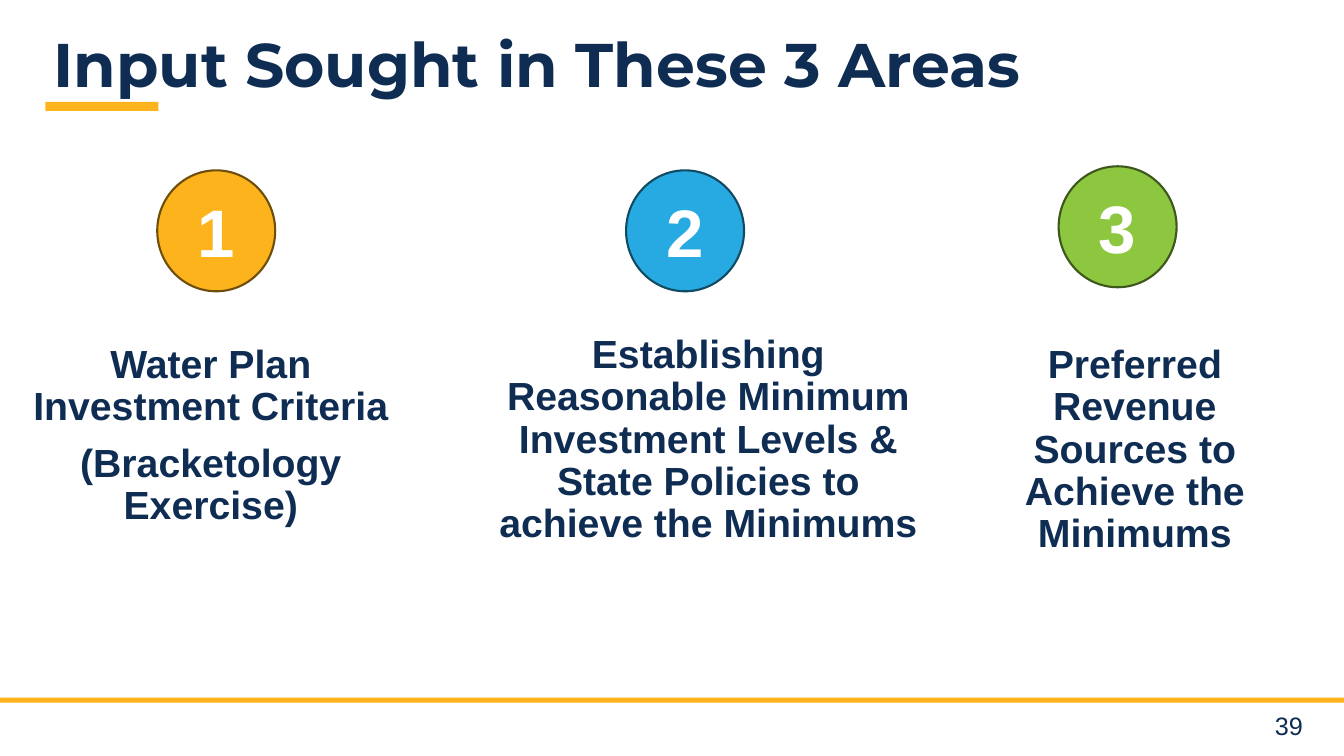
"""Build the slide that names the three areas where input is sought."""
from pptx import Presentation
from pptx.dml.color import RGBColor
from pptx.enum.shapes import MSO_SHAPE as Shape
from pptx.enum.text import MSO_ANCHOR as Anchor, MSO_AUTO_SIZE as AutoSize, PP_ALIGN as Align
from pptx.util import Inches, Pt

COLORS = {
    "navy": "0F2D52", "white": "FFFFFF",
    "gold": "FCB31C", "gold_edge": "6E4E0C",
    "blue": "27AAE1", "blue_edge": "114B63",
    "green": "8DC63F", "green_edge": "3E571C",
}
TITLE = "Input Sought in These 3 Areas"
PAGE_NUMBER = "39"
AREAS = [
    {"color": "gold", "circle": (1.56, 1.69), "label": (0.22, 3.37, 3.74),
     "lines": ["Water Plan Investment Criteria", "(Bracketology Exercise)"]},
    {"color": "blue", "circle": (6.21, 1.69), "label": (4.69, 3.27, 4.67),
     "lines": ["Establishing Reasonable Minimum Investment Levels & "
               "State Policies to achieve the Minimums"]},
    {"color": "green", "circle": (10.5, 1.65), "label": (9.88, 3.37, 2.75),
     "lines": ["Preferred Revenue Sources to Achieve the Minimums"]},
]
GOLD_BARS = [(0, 6.92, 13.33, 0.05), (0.45, 1.01, 1.12, 0.09)]
CIRCLE_SIZE = (1.17, 1.2)
LABEL_HEIGHT = 3.4
FORMATS = {
    "title": {"name": "Montserrat", "size": Pt(44), "bold": True},
    "number": {"name": "Arial", "size": Pt(48), "bold": True},
    "label": {"name": "Arial", "size": Pt(28), "bold": True},
    "page": {"name": "Arial", "size": Pt(18), "bold": False},
}


def rgb(color):
    return RGBColor.from_string(COLORS[color])


def write(frame, lines, style, color="navy", align=Align.CENTER, anchor=Anchor.TOP,
          line_spacing=None, gap=0):
    frame.word_wrap = True
    frame.auto_size = AutoSize.NONE
    frame.vertical_anchor = anchor
    for index, line in enumerate(lines):
        paragraph = frame.add_paragraph() if index else frame.paragraphs[0]
        paragraph.text = line
        paragraph.alignment = align
        paragraph.line_spacing = line_spacing
        paragraph.space_before = Pt(gap if index else 0)
        for attribute, value in FORMATS[style].items():
            setattr(paragraph.font, attribute, value)
        paragraph.font.color.rgb = rgb(color)


def add_filled(slide, preset, box, color, edge=None):
    filled = slide.shapes.add_shape(preset, *map(Inches, box))
    filled.shadow.inherit = False
    filled.fill.solid()
    filled.fill.fore_color.rgb = rgb(color)
    if edge:
        filled.line.color.rgb = rgb(edge)
        filled.line.width = Pt(1.5)
    else:
        filled.line.fill.background()
    return filled


def main():
    deck = Presentation()
    deck.slide_width, deck.slide_height = Inches(13.33), Inches(7.5)
    slide = deck.slides.add_slide(deck.slide_layouts[5])

    for bar in GOLD_BARS:
        add_filled(slide, Shape.RECTANGLE, bar, "gold")

    title = slide.shapes.title
    title.left, title.top, title.width, title.height = map(Inches, (0.43, 0.29, 12.72, 0.85))
    write(title.text_frame, [TITLE], "title", align=Align.LEFT, line_spacing=0.9)

    for number, area in enumerate(AREAS, 1):
        color = area["color"]
        circle = add_filled(slide, Shape.OVAL, area["circle"] + CIRCLE_SIZE,
                            color, f"{color}_edge")
        write(circle.text_frame, [str(number)], "number", "white", anchor=Anchor.MIDDLE)
        label = slide.shapes.add_textbox(*map(Inches, area["label"] + (LABEL_HEIGHT,)))
        write(label.text_frame, area["lines"], "label", line_spacing=0.9, gap=10)

    page = slide.shapes.add_textbox(*map(Inches, (12.08, 7, 0.94, 0.35)))
    write(page.text_frame, [PAGE_NUMBER], "page", align=Align.RIGHT)
    deck.save("out.pptx")


if __name__ == "__main__":
    main()
